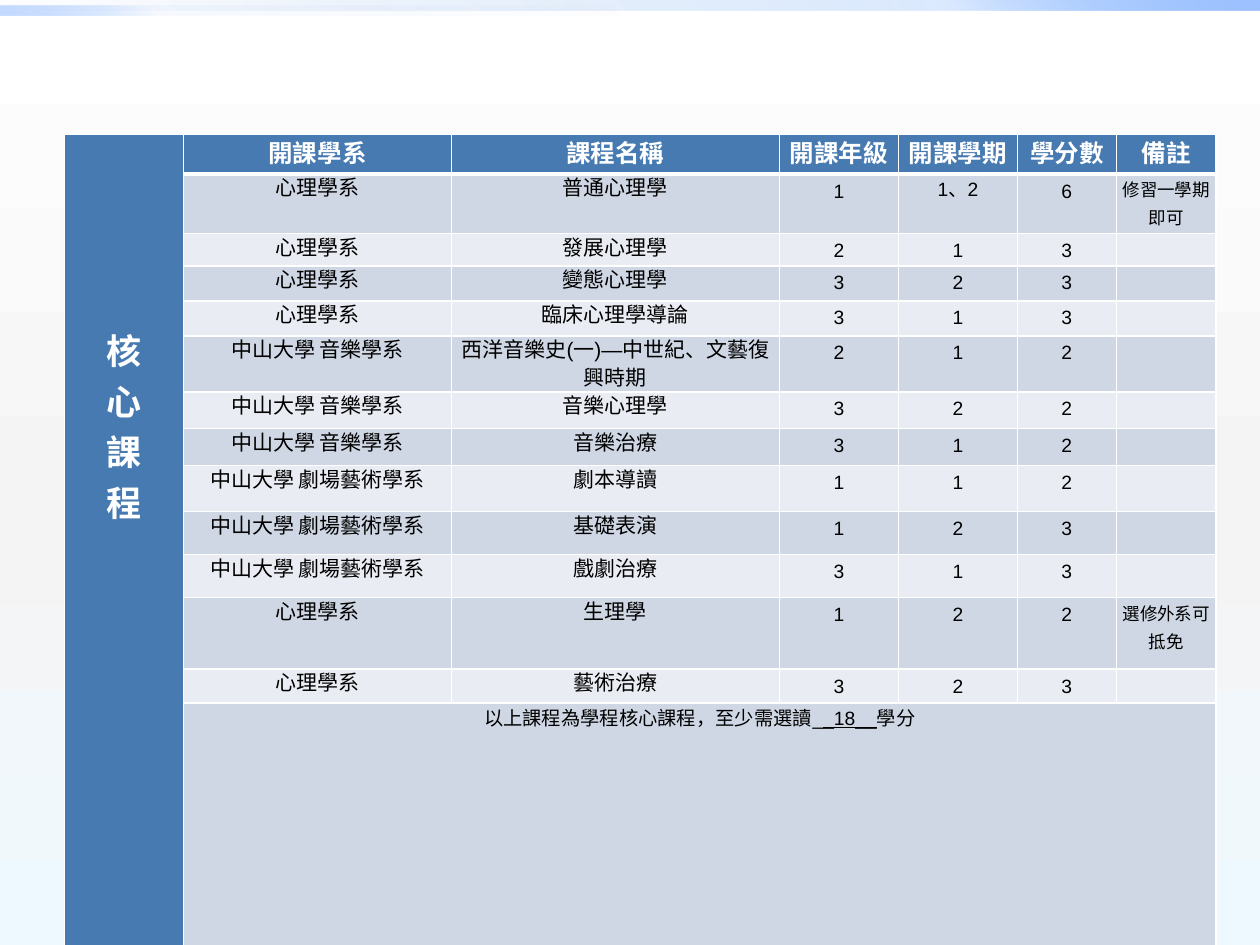
"""Build the core course table slide."""
import pptx
import pptx.util
import pptx.dml.color
import pptx.enum.shapes
import pptx.enum.text
import pptx.oxml
import pptx.oxml.ns

Pt = pptx.util.Pt
qn = pptx.oxml.ns.qn

COLORS = {"header": "477AB1", "dark": "CFD7E4", "light": "E9ECF2", "white": "FFFFFF", "text": "000000"}
FONT = "Arial"
SLIDE_WIDTH, SLIDE_HEIGHT = 720, 540
TABLE_LEFT, TABLE_TOP = 37, 77
COLUMN_WIDTHS = [68, 153, 187.5, 68, 68, 56.5, 57]
ROW_HEIGHTS = [22.5, 34, 18.5, 20, 20, 32, 21, 21, 26.5, 24.5, 24.5, 41, 19.5]
SIDE_TITLE = "核心課程"
SIDE_INSET = 120
HEADERS = ["開課學系", "課程名稱", "開課年級", "開課學期", "學分數", "備註"]
PSYCHOLOGY, MUSIC, THEATRE = "心理學系", "中山大學 音樂學系", "中山大學 劇場藝術學系"
COURSES = [
    (PSYCHOLOGY, "普通心理學", "1", "1、2", "6", "修習一學期即可"),
    (PSYCHOLOGY, "發展心理學", "2", "1", "3", ""),
    (PSYCHOLOGY, "變態心理學", "3", "2", "3", ""),
    (PSYCHOLOGY, "臨床心理學導論", "3", "1", "3", ""),
    (MUSIC, "西洋音樂史(一)—中世紀、文藝復興時期", "2", "1", "2", ""),
    (MUSIC, "音樂心理學", "3", "2", "2", ""),
    (MUSIC, "音樂治療", "3", "1", "2", ""),
    (THEATRE, "劇本導讀", "1", "1", "2", ""),
    (THEATRE, "基礎表演", "1", "2", "3", ""),
    (THEATRE, "戲劇治療", "3", "1", "3", ""),
    (PSYCHOLOGY, "生理學", "1", "2", "2", "選修外系可抵免"),
    (PSYCHOLOGY, "藝術治療", "3", "2", "3", ""),
]
COURSE_SIZES = [12, 12, 11, 11, 11, 10]
SUMMARY = [("以上課程為學程核心課程，至少需選讀_", False), ("_18__", True), ("學分", False)]
BACKGROUND = [(0, "FFFFFF", 100), (55, "F4F4F4", 100), (100, "EEF9FF", 100)]
BARS = [
    ((0, 0, 720, 6), 315, [(0, "0058B7", 0), (75, "4F95FF", 20), (100, "9EC2FF", 100)]),
    ((0, 3, 360, 6), 135, [(0, "0058B7", 0), (75, "4F95FF", 5), (100, "9EC2FF", 60)]),
]


def rgb(name):
    return pptx.dml.color.RGBColor.from_string(COLORS[name])


def set_gradient(fill, holder, stops, angle):
    fill.solid()
    stop_xml = "".join(
        f'<a:gs pos="{position * 1000}"><a:srgbClr val="{color}">'
        f'<a:alpha val="{opacity * 1000}"/></a:srgbClr></a:gs>'
        for position, color, opacity in stops
    )
    gradient = pptx.oxml.parse_xml(
        f'<a:gradFill {pptx.oxml.ns.nsdecls("a")} rotWithShape="1"><a:gsLst>{stop_xml}</a:gsLst>'
        f'<a:lin ang="{angle * 60000}" scaled="0"/></a:gradFill>'
    )
    holder.replace(holder.find(qn("a:solidFill")), gradient)


def style_cell(cell, color, bottom_width=1):
    cell.fill.solid()
    cell.fill.fore_color.rgb = rgb(color)
    cell.margin_left = cell.margin_right = Pt(3)
    cell.margin_top = cell.margin_bottom = 0
    properties = cell._tc.get_or_add_tcPr()
    widths = {"lnL": 1, "lnR": 1, "lnT": 1, "lnB": bottom_width}
    for index, (side, width) in enumerate(widths.items()):
        properties.insert(index, pptx.oxml.parse_xml(
            f'<a:{side} {pptx.oxml.ns.nsdecls("a")} w="{Pt(width)}"><a:solidFill>'
            f'<a:srgbClr val="{COLORS["white"]}"/></a:solidFill></a:{side}>'
        ))


def style_paragraph(paragraph, size, line, color="text", bold=False):
    paragraph.alignment = pptx.enum.text.PP_ALIGN.CENTER
    paragraph.line_spacing = Pt(line)
    paragraph.font.name = FONT
    paragraph.font.size = Pt(size)
    paragraph.font.bold = bold
    paragraph.font.color.rgb = rgb(color)


def add_bars(slide):
    for bounds, angle, stops in BARS:
        bar = slide.shapes.add_shape(
            pptx.enum.shapes.MSO_SHAPE.RECTANGLE, *[Pt(length) for length in bounds])
        bar.shadow.inherit = False
        bar.line.fill.background()
        set_gradient(bar.fill, bar.element.spPr, stops, angle)


def add_course_table(slide):
    heights = ROW_HEIGHTS + [SLIDE_HEIGHT - TABLE_TOP - sum(ROW_HEIGHTS)]
    table = slide.shapes.add_table(
        len(heights), len(COLUMN_WIDTHS), Pt(TABLE_LEFT), Pt(TABLE_TOP),
        Pt(sum(COLUMN_WIDTHS)), Pt(sum(heights))).table
    table.first_row = table.horz_banding = False
    for column, width in zip(table.columns, COLUMN_WIDTHS):
        column.width = Pt(width)
    for row_index, (row, height) in enumerate(zip(table.rows, heights)):
        row.height = Pt(height)
        band = "dark" if row_index % 2 else "light"
        for column_index, cell in enumerate(row.cells):
            is_header = row_index == 0 or column_index == 0
            style_cell(cell, "header" if is_header else band,
                       3 if row_index == 0 and column_index else 1)

    for row_index, texts in enumerate([HEADERS] + COURSES):
        for column_index, text in enumerate(texts):
            paragraph = table.cell(row_index, column_index + 1).text_frame.paragraphs[0]
            if row_index == 0:
                style_paragraph(paragraph, 14, 20, "white", True)
            else:
                style_paragraph(paragraph, COURSE_SIZES[column_index], 16)
            if text:
                paragraph.add_run().text = text

    last_row = len(heights) - 1
    side = table.cell(0, 0)
    side.merge(table.cell(last_row, 0))
    side.margin_top = Pt(SIDE_INSET)
    side.text = "\n".join(SIDE_TITLE)
    for index, paragraph in enumerate(side.text_frame.paragraphs):
        style_paragraph(paragraph, 20, 17, "white", True)
        if index:
            paragraph.space_before = Pt(12)

    summary = table.cell(last_row, 1)
    summary.merge(table.cell(last_row, len(COLUMN_WIDTHS) - 1))
    summary.fill.fore_color.rgb = rgb("dark")
    paragraph = summary.text_frame.paragraphs[0]
    style_paragraph(paragraph, 11, 16)
    for text, underlined in SUMMARY:
        run = paragraph.add_run()
        run.text = text
        run.font.underline = underlined


def main():
    presentation = pptx.Presentation()
    presentation.slide_width, presentation.slide_height = Pt(SLIDE_WIDTH), Pt(SLIDE_HEIGHT)
    slide = presentation.slides.add_slide(presentation.slide_layouts[6])
    background_fill = slide.background.fill
    background_fill.solid()
    set_gradient(background_fill, slide.element.find(".//" + qn("p:bgPr")), BACKGROUND, 90)
    add_bars(slide)
    add_course_table(slide)
    presentation.save("out.pptx")


if __name__ == "__main__":
    main()
